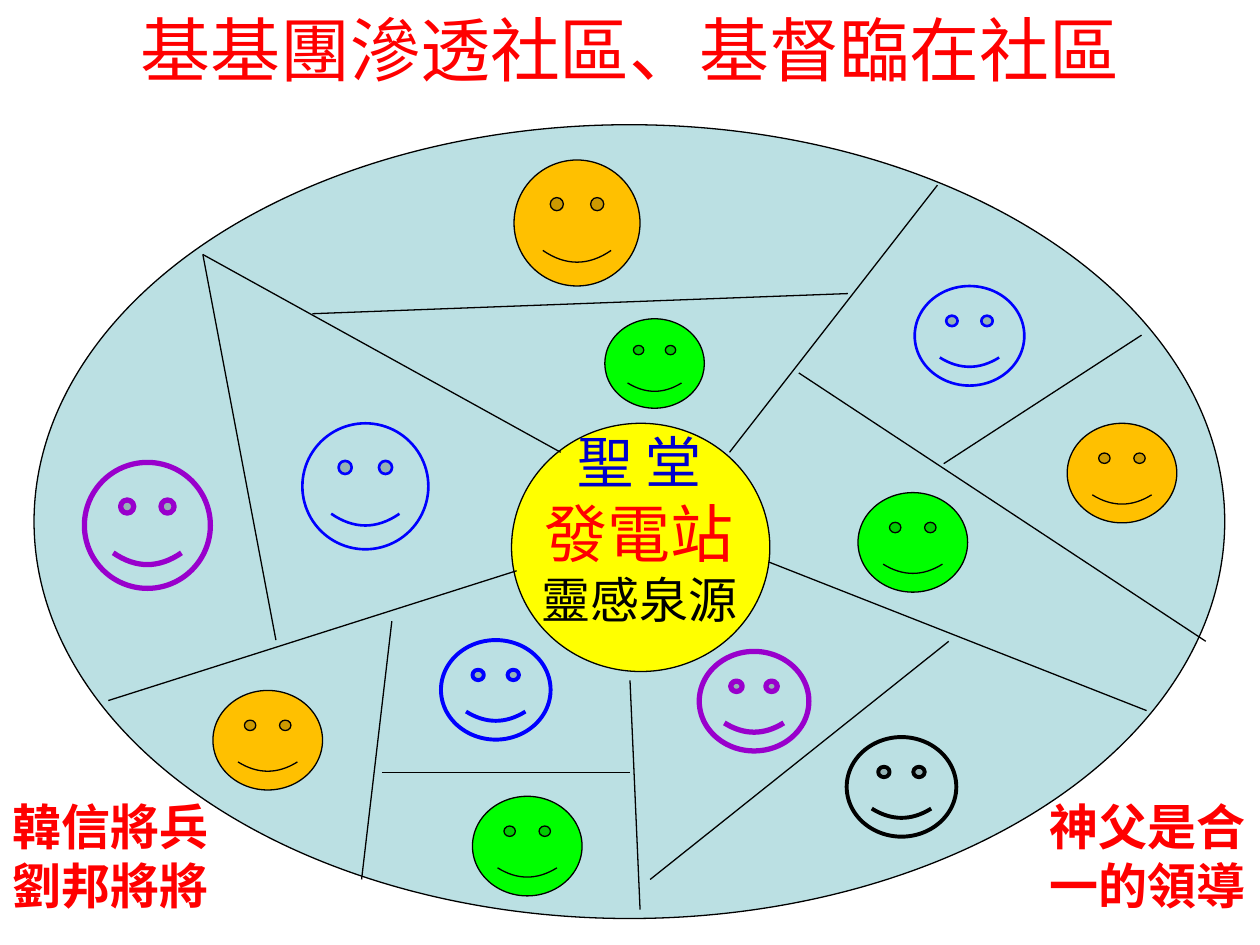
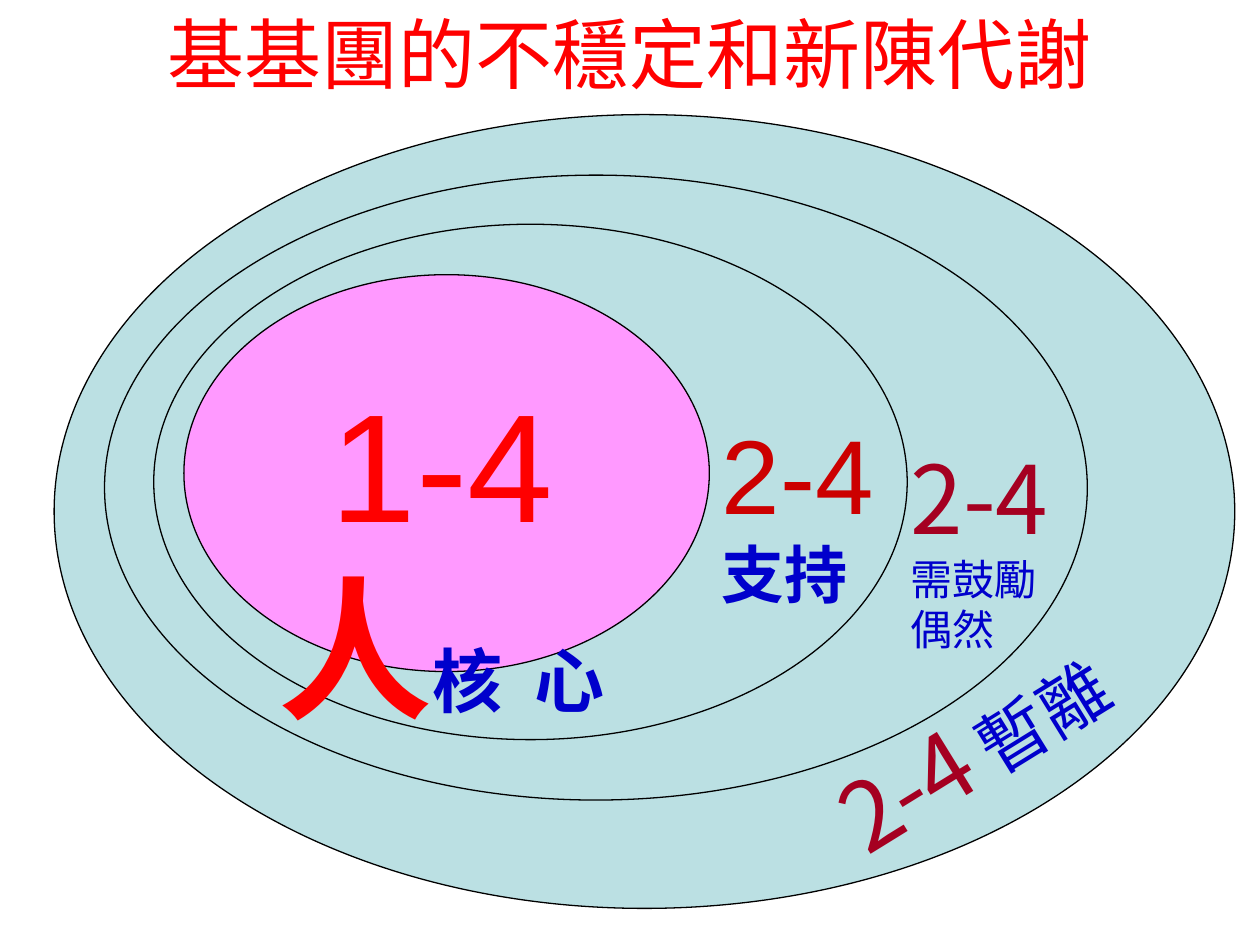
from dataclasses import dataclass
from typing import NamedTuple

from lxml.etree import SubElement
from pptx import Presentation
from pptx.dml.color import RGBColor
from pptx.enum.shapes import MSO_CONNECTOR, MSO_SHAPE
from pptx.enum.text import MSO_ANCHOR, PP_ALIGN
from pptx.oxml.ns import qn
from pptx.util import Inches, Pt

# Grid over the slide: 100 columns by 75 rows
SLIDE_WIDTH, SLIDE_HEIGHT = Inches(10), Inches(7.5)
COLUMN, ROW = SLIDE_WIDTH / 100, SLIDE_HEIGHT / 75


@dataclass(frozen=True)
class Theme:
    latin: str = "Arial"
    chinese: str = "Noto Sans CJK SC"
    red: str = "FF0000"
    dark_red: str = "CC0000"
    crimson: str = "A50021"
    navy: str = "0000CC"
    blue: str = "0000FF"
    purple: str = "9900CC"
    black: str = "000000"
    pale: str = "BBE0E3"
    yellow: str = "FFFF00"
    orange: str = "FFC000"
    green: str = "00FF00"
    pink: str = "FF99FF"
    giant: int = 88
    wide_gap: int = 80
    huge: int = 60
    large: int = 54
    title: int = 44
    heading: int = 40
    medium: int = 36
    label: int = 32
    body: int = 28
    small: int = 24
    hairline: float = 0.75


THEME = Theme()


class Box(NamedTuple):
    """Left, top, width and height in grid units."""
    column: float
    row: float
    columns: float
    rows: float


class Span(NamedTuple):
    """A piece of text in one format."""
    text: str
    size: float
    color: str
    font: str = THEME.latin
    bold: bool = False


class FaceStyle(NamedTuple):
    fill: str
    line: str = THEME.black
    weight: float = THEME.hairline


class Face(NamedTuple):
    column: float
    row: float
    size: tuple[float, float]
    style: FaceStyle


class Label(NamedTuple):
    """Paragraphs of spans in a box."""
    box: Box
    paragraphs: list[list[Span]]
    align: PP_ALIGN = PP_ALIGN.LEFT
    rotation: float = 0


def place(box: Box) -> list[int]:
    return [round(box.column * COLUMN), round(box.row * ROW),
            round(box.columns * COLUMN), round(box.rows * ROW)]


def apply(target, formats: dict) -> None:
    for name, value in formats.items():
        setattr(target, name, value)


def draw_shape(slide, kind: MSO_SHAPE, box: Box, style: FaceStyle) -> None:
    shape = slide.shapes.add_shape(kind, *place(box))
    shape.shadow.inherit = False
    shape.fill.solid()
    shape.fill.fore_color.rgb = RGBColor.from_string(style.fill)
    shape.line.color.rgb = RGBColor.from_string(style.line)
    shape.line.width = Pt(style.weight)


def draw_oval(slide, box: Box, fill: str) -> None:
    draw_shape(slide, MSO_SHAPE.OVAL, box, FaceStyle(fill))


def draw_face(slide, face: Face) -> None:
    draw_shape(slide, MSO_SHAPE.SMILEY_FACE, Box(face.column, face.row, *face.size), face.style)


def draw_border(slide, start: tuple[float, float], end: tuple[float, float]) -> None:
    points = [round(value * unit) for point in (start, end)
              for value, unit in zip(point, (COLUMN, ROW))]
    connector = slide.shapes.add_connector(MSO_CONNECTOR.STRAIGHT, *points)
    connector.line.color.rgb = RGBColor.from_string(THEME.black)
    connector.line.width = Pt(THEME.hairline)
    SubElement(connector._element.spPr, qn("a:effectLst"))


def draw_label(slide, label: Label) -> None:
    shape = slide.shapes.add_textbox(*place(label.box))
    shape.rotation = label.rotation
    frame = shape.text_frame
    apply(frame, {"word_wrap": True, "vertical_anchor": MSO_ANCHOR.TOP})
    for index, spans in enumerate(label.paragraphs):
        paragraph = frame.add_paragraph() if index else frame.paragraphs[0]
        paragraph.alignment = label.align
        for span in spans:
            run = paragraph.add_run()
            run.text = span.text
            apply(run.font, {"name": span.font, "size": Pt(span.size), "bold": span.bold})
            run.font.color.rgb = RGBColor.from_string(span.color)
            SubElement(run.font._element, qn("a:ea"), typeface=THEME.chinese)


def add_titled_slide(presentation, title: str, size: int):
    slide = presentation.slides.add_slide(presentation.slide_layouts[6])
    span = Span(title, size, THEME.red, THEME.chinese)
    draw_label(slide, Label(Box(0, 0, 100, 9), [[span]], PP_ALIGN.CENTER))
    return slide


# Slide 1: community districts and their groups
COMMUNITY = Box(2.7, 9.9, 94.5, 63)
CHURCH = Box(40.6, 33.6, 20.5, 19.7)
BORDERS = [
    ((8.6, 55.6), (41, 45.3)),
    ((61, 44.6), (91, 56.4)),
    ((50, 54), (50.8, 72.2)),
    ((44.5, 35.9), (16.1, 20.2)),
    ((57.9, 35.9), (74.4, 14.7)),
    ((24.8, 24.9), (67.3, 23.3)),
    ((16.1, 20.2), (21.9, 50.8)),
    ((31.1, 49.3), (28.7, 69.8)),
    ((30.3, 61.3), (50, 61.3)),
    ((51.6, 69.8), (75.3, 50.9)),
    ((63.4, 29.6), (95.7, 50.9)),
    ((74.9, 36.8), (90.6, 26.6)),
]
BIG, MIDDLE, LITTLE = (10, 10), (8.7, 7.9), (7.9, 7.1)
ORANGE, GREEN = FaceStyle(THEME.orange), FaceStyle(THEME.green)
PURPLE = FaceStyle(THEME.pale, THEME.purple, 3)
BLUE = FaceStyle(THEME.pale, THEME.blue, 1.5)
BOLD_BLUE = FaceStyle(THEME.pale, THEME.blue, 2.25)
BOLD_BLACK = FaceStyle(THEME.pale, THEME.black, 2.25)
FACES = [
    Face(6.7, 36.7, BIG, PURPLE),
    Face(24, 33.6, BIG, BLUE),
    Face(40.8, 12.7, BIG, ORANGE),
    Face(48, 25.3, LITTLE, GREEN),
    Face(35, 50.8, MIDDLE, BOLD_BLUE),
    Face(37.5, 63.2, MIDDLE, GREEN),
    Face(16.9, 54.8, MIDDLE, ORANGE),
    Face(84.7, 33.6, MIDDLE, ORANGE),
    Face(72.6, 22.7, MIDDLE, BLUE),
    Face(67.2, 58.5, MIDDLE, BOLD_BLACK),
    Face(55.5, 51.7, MIDDLE, PURPLE),
    Face(68.1, 39.1, MIDDLE, GREEN),
]
CHURCH_LABEL = Label(Box(41.3, 33.4, 18.9, 17.2), [
    [Span("聖 堂", THEME.label, THEME.navy, THEME.chinese)],
    [Span("發電站", THEME.medium, THEME.red, THEME.chinese)],
    [Span("靈感泉源", THEME.body, THEME.black, THEME.chinese)],
], PP_ALIGN.CENTER)
CORNER_NOTES = [
    (Box(0, 62.7, 18.5, 10.3), ("韓信將兵", "劉邦將將")),
    (Box(82.3, 62.7, 17.7, 10.3), ("神父是合", "一的領導")),
]

# Slide 2: nested rings from the core outwards
RINGS = [
    (Box(4.3, 9.1, 93.7, 63), THEME.pale),
    (Box(8.3, 13.9, 78, 49.6), THEME.pale),
    (Box(12.2, 17.8, 59.8, 40.9), THEME.pale),
    (Box(14.6, 21.8, 41.7, 31.5), THEME.pink),
]
OUTER_COUNT = Span("2-4", THEME.large, THEME.crimson, THEME.chinese)
RING_LABELS = [
    Label(Box(18.5, 28.8, 33.1, 22.3), [[
        Span("1-4 ", THEME.giant, THEME.red),
        Span("人", THEME.giant, THEME.red, bold=True),
        Span("核", THEME.heading, THEME.navy, bold=True),
        Span(" ", THEME.wide_gap, THEME.navy, bold=True),
        Span("心", THEME.heading, THEME.navy, bold=True),
    ]], PP_ALIGN.CENTER),
    Label(Box(56.3, 32, 15.7, 17), [[
        Span("2-4", THEME.huge, THEME.dark_red),
        Span("支持", THEME.medium, THEME.navy, bold=True),
    ]]),
    Label(Box(71.3, 34.4, 15, 18.2), [
        [OUTER_COUNT],
        [Span("需鼓勵", THEME.small, THEME.navy, THEME.chinese)],
        [Span("偶然", THEME.small, THEME.navy, THEME.chinese)],
    ]),
    Label(Box(64.2, 53.2, 29.6, 10), [[
        OUTER_COUNT,
        Span(" ", THEME.heading, THEME.black, THEME.chinese),
        Span("暫離", THEME.heading, THEME.navy, THEME.chinese),
    ]], rotation=328.3),
]


def build_community(presentation) -> None:
    slide = add_titled_slide(presentation, "基基團滲透社區、基督臨在社區", THEME.heading)
    draw_oval(slide, COMMUNITY, THEME.pale)
    draw_oval(slide, CHURCH, THEME.yellow)
    draw_label(slide, CHURCH_LABEL)
    for start, end in BORDERS:
        draw_border(slide, start, end)
    for face in FACES:
        draw_face(slide, face)
    for box, lines in CORNER_NOTES:
        paragraphs = [[Span(line, THEME.body, THEME.red, bold=True)] for line in lines]
        draw_label(slide, Label(box, paragraphs))


def build_rings(presentation) -> None:
    slide = add_titled_slide(presentation, "基基團的不穩定和新陳代謝", THEME.title)
    for box, fill in RINGS:
        draw_oval(slide, box, fill)
    for label in RING_LABELS:
        draw_label(slide, label)


def main() -> None:
    presentation = Presentation()
    apply(presentation, {"slide_width": SLIDE_WIDTH, "slide_height": SLIDE_HEIGHT})
    build_community(presentation)
    build_rings(presentation)
    presentation.save("out.pptx")


if __name__ == "__main__":
    main()
